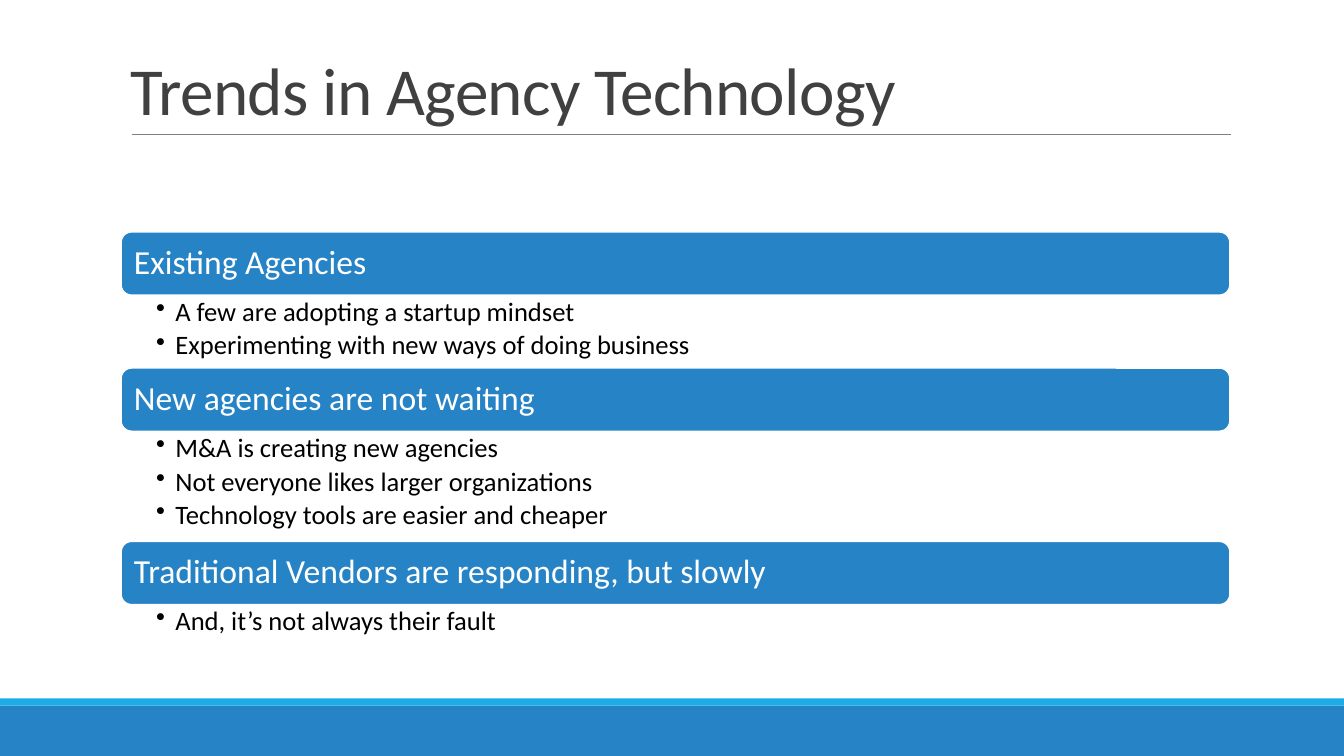
from pptx import Presentation
from pptx.dml.color import RGBColor
from pptx.enum.shapes import MSO_CONNECTOR, MSO_SHAPE
from pptx.enum.text import MSO_ANCHOR, PP_ALIGN
from pptx.oxml.ns import qn
from pptx.util import Inches, Pt
from lxml import etree

RECTANGLE, ROUNDED = MSO_SHAPE.RECTANGLE, MSO_SHAPE.ROUNDED_RECTANGLE
STRAIGHT = MSO_CONNECTOR.STRAIGHT
MIDDLE, BOTTOM, LEFT = MSO_ANCHOR.MIDDLE, MSO_ANCHOR.BOTTOM, PP_ALIGN.LEFT

BLUE = RGBColor(0x26, 0x83, 0xC6)
CYAN = RGBColor(0x1C, 0xAD, 0xE4)
GRAY = RGBColor(0x80, 0x80, 0x80)
CHARCOAL = RGBColor(0x40, 0x40, 0x40)
WHITE = RGBColor(0xFF, 0xFF, 0xFF)
BLACK = RGBColor(0x00, 0x00, 0x00)

LIST_LEFT, LIST_WIDTH = 1.2, 11
BAR_HEIGHT = 0.63
TRENDS = [
    ("Existing Agencies", 0.72,
     ["A few are adopting a startup mindset",
      "Experimenting with new ways of doing business"]),
    ("New agencies are not waiting", 1.09,
     ["M&A is creating new agencies",
      "Not everyone likes larger organizations",
      "Technology tools are easier and cheaper"]),
    ("Traditional Vendors are responding, but slowly", 0.43,
     ["And, it’s not always their fault"]),
]


def add_block(kind, left, top, width, height, color):
    block = page.shapes.add_shape(kind, Inches(left), Inches(top), Inches(width), Inches(height))
    block.shadow.inherit = False
    block.fill.solid()
    block.fill.fore_color.rgb = color
    block.line.fill.background()
    return block


def style(para, size, color, line_spacing):
    para.alignment = LEFT
    para.line_spacing = line_spacing
    para.font.name = "Calibri"
    para.font.size = Pt(size)
    para.font.color.rgb = color


deck = Presentation()
deck.slide_width, deck.slide_height = Inches(13.33), Inches(7.5)
page = deck.slides.add_slide(deck.slide_layouts[6])

# Footer bands
add_block(RECTANGLE, 0, 7, 13.33, 0.5, BLUE)
add_block(RECTANGLE, 0, 6.93, 13.33, 0.07, CYAN)

# Title and rule
rule = page.shapes.add_connector(STRAIGHT, Inches(1.31), Inches(1.33), Inches(12.21), Inches(1.33))
rule.line.color.rgb = GRAY
rule.line.width = Pt(0.5)
etree.SubElement(rule._element.spPr, qn("a:effectLst"))

title = page.shapes.add_textbox(Inches(LIST_LEFT), Inches(0.31), Inches(LIST_WIDTH), Inches(1.02))
title.text_frame.word_wrap = True
title.text_frame.vertical_anchor = BOTTOM
para = title.text_frame.paragraphs[0]
span = para.add_run()
span.text = "Trends in Agency Technology"
span._r.get_or_add_rPr().set("spc", "-50")
style(para, 48, CHARCOAL, 0.85)

# Heading bars, each followed by its bullets
top = 2.3
for heading, list_height, points in TRENDS:
    bar = add_block(ROUNDED, LIST_LEFT, top, LIST_WIDTH, BAR_HEIGHT, BLUE)
    bar.line.color.rgb = WHITE
    bar.line.width = Pt(1.25)
    frame = bar.text_frame
    frame.word_wrap = True
    frame.vertical_anchor = MIDDLE
    frame.margin_left = frame.margin_right = Inches(0.1)
    frame.text = heading
    style(frame.paragraphs[0], 24, WHITE, 0.9)
    top += BAR_HEIGHT

    box = page.shapes.add_textbox(Inches(LIST_LEFT), Inches(top), Inches(LIST_WIDTH), Inches(list_height))
    frame = box.text_frame
    frame.word_wrap = True
    frame.margin_left, frame.margin_right = Inches(0.35), Inches(0.19)
    frame.margin_top = frame.margin_bottom = Inches(0.03)
    frame.text = "\n".join(points)
    for para in frame.paragraphs:
        properties = para._p.get_or_add_pPr()
        properties.set("marL", str(Inches(0.19)))
        properties.set("indent", str(-Inches(0.19)))
        etree.SubElement(properties, qn("a:buChar")).set("char", "•")
        style(para, 19, BLACK, 0.9)
        para.space_after = Pt(3.5)
    top += list_height

deck.save("out.pptx")
